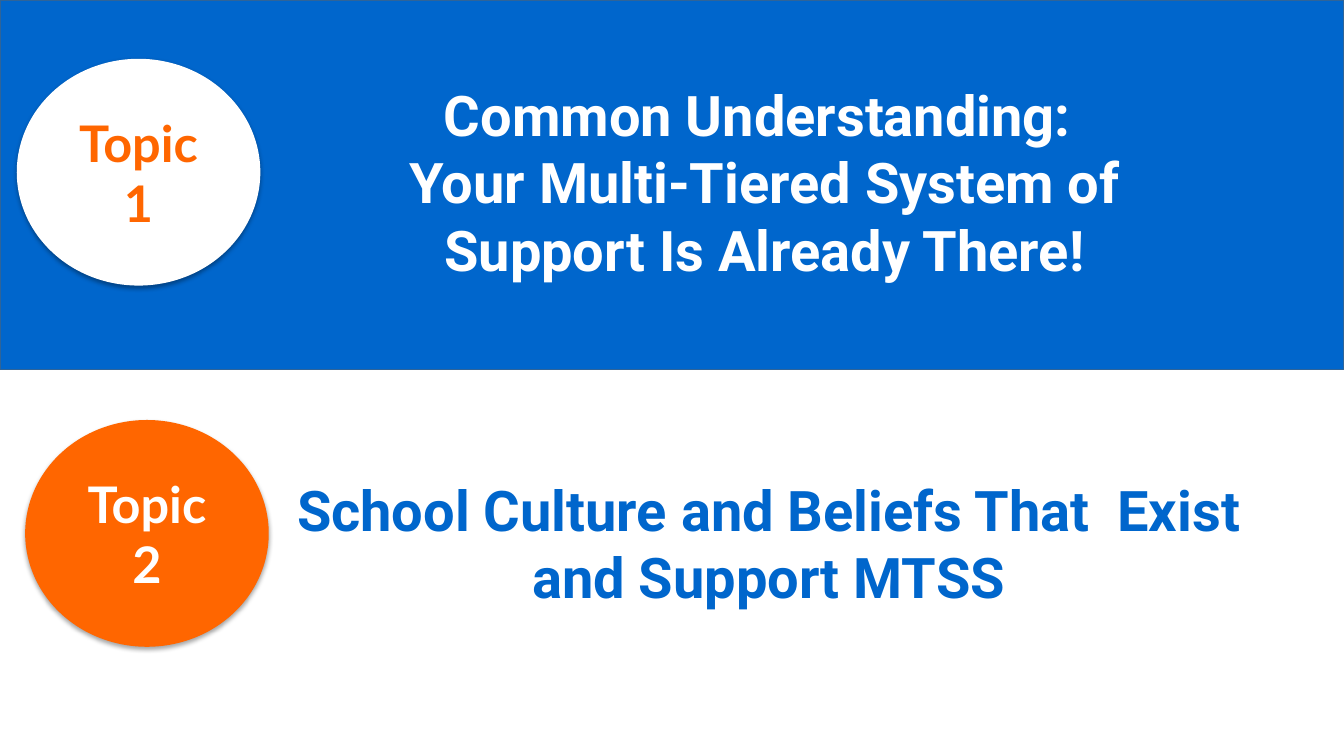
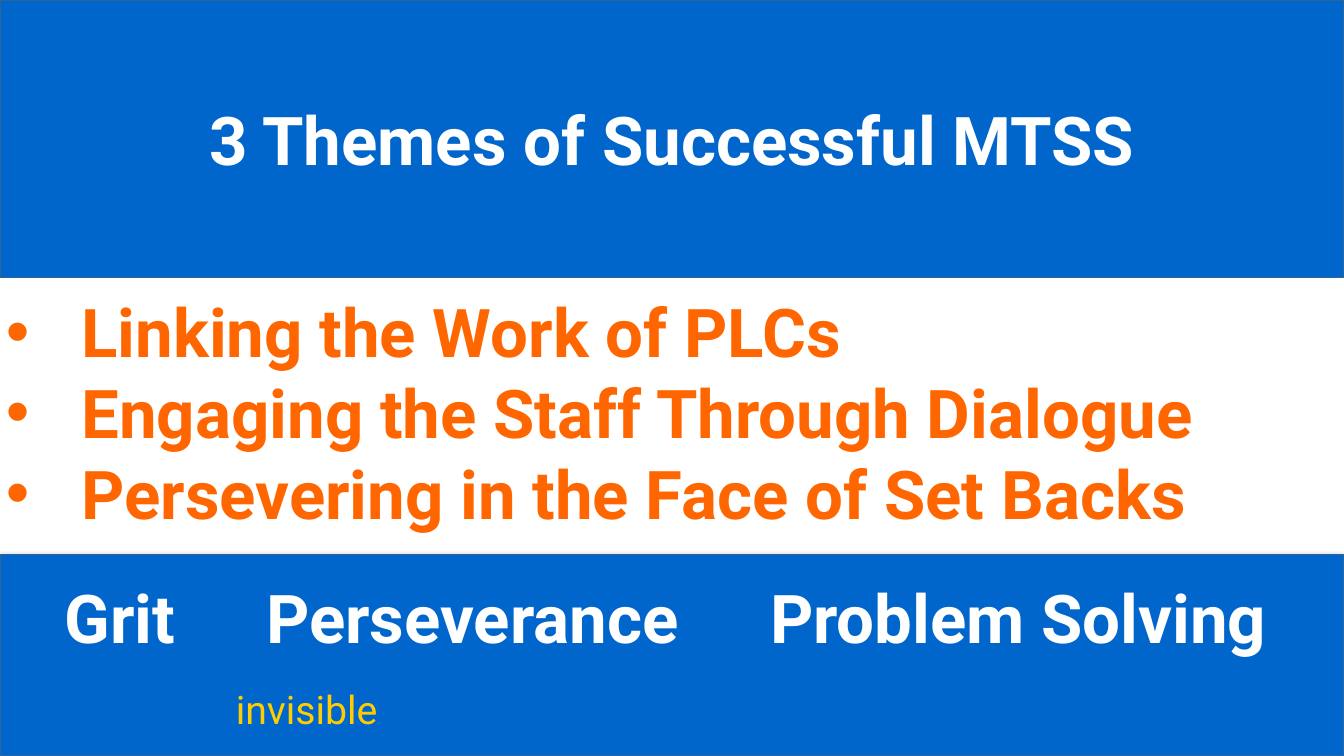
from dataclasses import dataclass

from lxml import etree
from pptx import Presentation
from pptx.dml.color import RGBColor
from pptx.enum.shapes import MSO_SHAPE
from pptx.enum.text import MSO_ANCHOR, MSO_AUTO_SIZE, PP_ALIGN
from pptx.oxml.ns import qn
from pptx.util import Pt

RECTANGLE, OVAL = MSO_SHAPE.RECTANGLE, MSO_SHAPE.OVAL
TOP, MIDDLE = MSO_ANCHOR.TOP, MSO_ANCHOR.MIDDLE
LEFT, CENTER = PP_ALIGN.LEFT, PP_ALIGN.CENTER
FIXED_SIZE = MSO_AUTO_SIZE.NONE
TITLE_AND_CONTENT, TITLE_ONLY = 1, 5


@dataclass(frozen=True)
class Theme:
    width: int = 960
    height: int = 540
    blue: str = "0066CC"
    edge: str = "2F6498"
    orange: str = "FF6600"
    yellow: str = "FFCC00"
    white: str = "FFFFFF"
    font: str = "Roboto"
    badge_font: str = "Lato"
    theme_size: int = 48
    topic_size: int = 40
    badge_size: int = 36
    note_size: int = 28


def write(frame, text, *, size, color, font=Theme.font, bold=True,
          align=CENTER, anchor=TOP):
    frame.word_wrap = True
    frame.auto_size = FIXED_SIZE
    frame.vertical_anchor = anchor
    frame.text = text
    for paragraph in frame.paragraphs:
        paragraph.alignment = align
        paragraph.space_before = Pt(0)
        for run in paragraph.runs:
            run.font.name = font
            run.font.size = Pt(size)
            run.font.bold = bold
            run.font.color.rgb = RGBColor.from_string(color)


class Deck:
    def __init__(self, theme):
        self.theme = theme
        self.presentation = Presentation()
        self.presentation.slide_width = Pt(theme.width)
        self.presentation.slide_height = Pt(theme.height)
        self.slide = None

    def new_slide(self, layout):
        layouts = self.presentation.slide_layouts
        self.slide = self.presentation.slides.add_slide(layouts[layout])

    def place(self, shape, box):
        shape.left, shape.top, shape.width, shape.height = map(Pt, box)

    def shadow(self, shape):
        effects = etree.SubElement(shape._element.spPr, qn("a:effectLst"))
        outer = etree.SubElement(effects, qn("a:outerShdw"), blurRad="40000",
                                 dist="23000", dir="5400000", rotWithShape="0")
        color = etree.SubElement(outer, qn("a:srgbClr"), val="000000")
        etree.SubElement(color, qn("a:alpha"), val="35000")

    def band(self, top, height, shadow=False):
        band = self.slide.shapes.add_shape(
            RECTANGLE, 0, Pt(top), Pt(self.theme.width), Pt(height))
        band.fill.solid()
        band.fill.fore_color.rgb = RGBColor.from_string(self.theme.blue)
        band.line.color.rgb = RGBColor.from_string(self.theme.edge)
        band.line.width = Pt(0.75)
        if shadow:
            self.shadow(band)
        else:
            band.shadow.inherit = False
        self.slide.shapes._spTree.insert(2, band._element)

    def title(self, text, box, **style):
        title = self.slide.shapes.title
        self.place(title, box)
        write(title.text_frame, text, color=self.theme.white, **style)

    def bullets(self, items, box, indent, **style):
        body = self.slide.placeholders[1]
        self.place(body, box)
        write(body.text_frame, "\n".join(items), align=LEFT, **style)
        for paragraph in body.text_frame.paragraphs:
            properties = paragraph._p.get_or_add_pPr()
            properties.set("marL", str(Pt(indent)))
            properties.set("indent", str(-Pt(indent)))
            etree.SubElement(properties, qn("a:buFont"), typeface="Arial")
            etree.SubElement(properties, qn("a:buChar"), char="•")

    def text(self, text, box, **style):
        frame = self.slide.shapes.add_textbox(*map(Pt, box)).text_frame
        write(frame, text, **style)
        return frame

    def columns(self, words, box, stops, **style):
        frame = self.text("\t".join(words), box, align=LEFT, **style)
        properties = frame.paragraphs[0]._p.get_or_add_pPr()
        tabs = etree.SubElement(properties, qn("a:tabLst"))
        for stop in stops:
            etree.SubElement(tabs, qn("a:tab"), pos=str(Pt(stop)), algn="l")

    def badge(self, text, left, top, fill, color):
        badge = self.slide.shapes.add_shape(
            OVAL, Pt(left), Pt(top), Pt(174), Pt(162))
        badge.fill.solid()
        badge.fill.fore_color.rgb = RGBColor.from_string(fill)
        badge.line.fill.background()
        self.shadow(badge)
        write(badge.text_frame, text, size=self.theme.badge_size, color=color,
              font=self.theme.badge_font, anchor=MIDDLE)


def topics(deck):
    theme = deck.theme
    deck.new_slide(TITLE_ONLY)
    deck.band(0, 264)
    deck.title("Common Understanding: \n"
               "Your Multi-Tiered System of Support Is Already There!",
               (216, 54, 660, 153), size=theme.topic_size)
    deck.text("School Culture and Beliefs That  Exist and Support MTSS",
              (204, 336, 690, 104), size=theme.topic_size, color=theme.blue)
    deck.badge("Topic 1", 12, 42, theme.white, theme.orange)
    deck.badge("Topic 2", 18, 300, theme.orange, theme.white)


def themes(deck):
    theme = deck.theme
    deck.new_slide(TITLE_AND_CONTENT)
    deck.band(0, 198)
    deck.band(396, 144, shadow=True)
    deck.title("3 Themes of Successful MTSS", (0, 0, theme.width, 198),
               size=theme.theme_size, anchor=MIDDLE)
    deck.bullets(["Linking the Work of PLCs",
                  "Engaging the Staff Through Dialogue",
                  "Persevering in the Face of Set Backs"],
                 (-3, 204, theme.width, 240), 54,
                 size=theme.theme_size, color=theme.orange)
    deck.columns(["Grit", "Perseverance", "Problem Solving"],
                 (39, 408, 914, 66), (144, 504),
                 size=theme.theme_size, color=theme.white)
    deck.text("invisible", (36, 486, 366, 41), size=theme.note_size,
              color=theme.yellow, bold=False)


def main():
    deck = Deck(Theme())
    topics(deck)
    themes(deck)
    deck.presentation.save("out.pptx")


if __name__ == "__main__":
    main()
